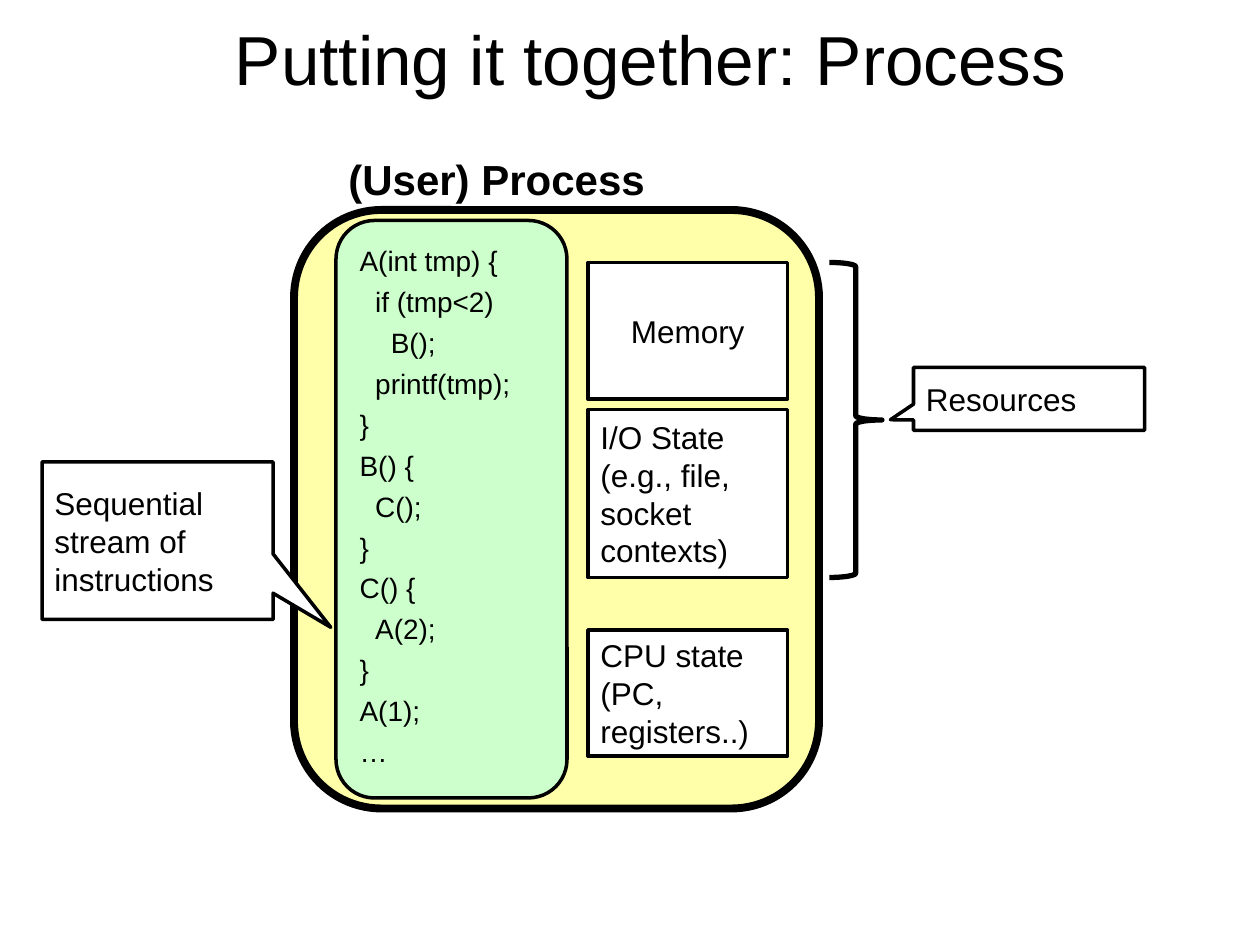
"""Build a slide that shows the parts of a process."""

from typing import NamedTuple

from pptx import Presentation
from pptx.dml.color import RGBColor
from pptx.enum.shapes import MSO_SHAPE
from pptx.enum.text import MSO_ANCHOR, MSO_AUTO_SIZE, PP_ALIGN
from pptx.util import Pt

COLORS = {
    "ink": "000000",
    "paper": "FFFFFF",
    "process": "FFFFAA",
    "code": "CCFFCC",
}
FONT = "Arial"
CODE_INDENT = 8.9
CODE_SPACING = 8


class Box(NamedTuple):
    kind: MSO_SHAPE
    left: float
    top: float
    width: float
    height: float
    text: str = ""
    fill: str = "paper"
    line_width: float = 2
    adjustments: tuple[float, ...] = ()
    alignment: PP_ALIGN = PP_ALIGN.LEFT


class CodeLine(NamedTuple):
    text: str
    depth: int = 0


PROCESS = Box(MSO_SHAPE.ROUNDED_RECTANGLE, 168, 120, 300, 342, fill="process", line_width=4.5)
STATES = (
    Box(MSO_SHAPE.RECTANGLE, 336, 150, 114, 78, "Memory", alignment=PP_ALIGN.CENTER),
    Box(MSO_SHAPE.RECTANGLE, 336, 234, 114, 96, "I/O State\n(e.g., file, socket contexts)"),
    Box(MSO_SHAPE.RECTANGLE, 336, 360, 114, 72, "CPU state (PC, registers..)"),
)
INSTRUCTIONS = Box(
    MSO_SHAPE.RECTANGULAR_CALLOUT, 24, 264, 132, 90,
    "Sequential stream of instructions", adjustments=(0.75, 0.55),
)
CODE = Box(MSO_SHAPE.ROUNDED_RECTANGLE, 192, 126, 132, 330, fill="code")
BRACE = Box(MSO_SHAPE.RIGHT_BRACE, 474, 150, 30, 180, line_width=3, adjustments=(0.08, 0.5))
RESOURCES = Box(
    MSO_SHAPE.RECTANGULAR_CALLOUT, 522, 210, 132, 36,
    "Resources", adjustments=(-0.6, 0.33),
)
CODE_LINES = (
    CodeLine("A(int tmp) {"),
    CodeLine("if (tmp<2)", 1),
    CodeLine("B();", 2),
    CodeLine("printf(tmp);", 1),
    CodeLine("}"),
    CodeLine("B() {"),
    CodeLine("C();", 1),
    CodeLine("}"),
    CodeLine("C() {"),
    CodeLine("A(2);", 1),
    CodeLine("}"),
    CodeLine("A(1);"),
    CodeLine("…"),
)


def color(name: str) -> RGBColor:
    return RGBColor.from_string(COLORS[name])


def format_text(text_frame, size: float, alignment=PP_ALIGN.LEFT, bold: bool = False) -> None:
    for paragraph in text_frame.paragraphs:
        paragraph.alignment = alignment
        for run in paragraph.runs:
            run.font.name = FONT
            run.font.size = Pt(size)
            run.font.bold = bold
            run.font.color.rgb = color("ink")


def draw_box(slide, box: Box):
    shape = slide.shapes.add_shape(
        box.kind, Pt(box.left), Pt(box.top), Pt(box.width), Pt(box.height)
    )
    shape.shadow.inherit = False
    shape.fill.solid()
    shape.fill.fore_color.rgb = color(box.fill)
    shape.line.color.rgb = color("ink")
    shape.line.width = Pt(box.line_width)
    for index, value in enumerate(box.adjustments):
        shape.adjustments[index] = value
    if box.text:
        shape.text_frame.text = box.text
        shape.text_frame.vertical_anchor = MSO_ANCHOR.MIDDLE
        format_text(shape.text_frame, 18, box.alignment)
    return shape


def draw_code(slide, box: Box, lines: tuple[CodeLine, ...]) -> None:
    text_frame = draw_box(slide, box).text_frame
    text_frame.vertical_anchor = MSO_ANCHOR.MIDDLE
    text_frame.text = "\n".join(line.text for line in lines)
    format_text(text_frame, 16)
    for paragraph, line in zip(text_frame.paragraphs, lines):
        paragraph.line_spacing = 0.8
        paragraph.space_before = Pt(CODE_SPACING)
        paragraph._p.get_or_add_pPr().set("marL", str(Pt(CODE_INDENT * line.depth)))


def draw_title(slide, text: str) -> None:
    title = slide.shapes.title
    title.left, title.top, title.width, title.height = Pt(36), Pt(12), Pt(672), Pt(42)
    text_frame = title.text_frame
    text_frame.text = text
    text_frame.auto_size = MSO_AUTO_SIZE.NONE
    text_frame.vertical_anchor = MSO_ANCHOR.MIDDLE
    format_text(text_frame, 39.6, PP_ALIGN.CENTER)


def draw_label(slide, text: str) -> None:
    text_frame = slide.shapes.add_textbox(Pt(192), Pt(84), Pt(184), Pt(36.5)).text_frame
    text_frame.text = text
    text_frame.word_wrap = False
    text_frame.auto_size = MSO_AUTO_SIZE.SHAPE_TO_FIT_TEXT
    format_text(text_frame, 24, bold=True)


def main() -> None:
    presentation = Presentation()
    presentation.slide_width, presentation.slide_height = Pt(720), Pt(540)
    slide = presentation.slides.add_slide(presentation.slide_layouts.get_by_name("Title Only"))
    draw_title(slide, "Putting it together: Process")
    for box in (PROCESS, *STATES, INSTRUCTIONS):
        draw_box(slide, box)
    draw_code(slide, CODE, CODE_LINES)
    draw_label(slide, "(User) Process")
    for box in (BRACE, RESOURCES):
        draw_box(slide, box)
    presentation.save("out.pptx")


if __name__ == "__main__":
    main()
